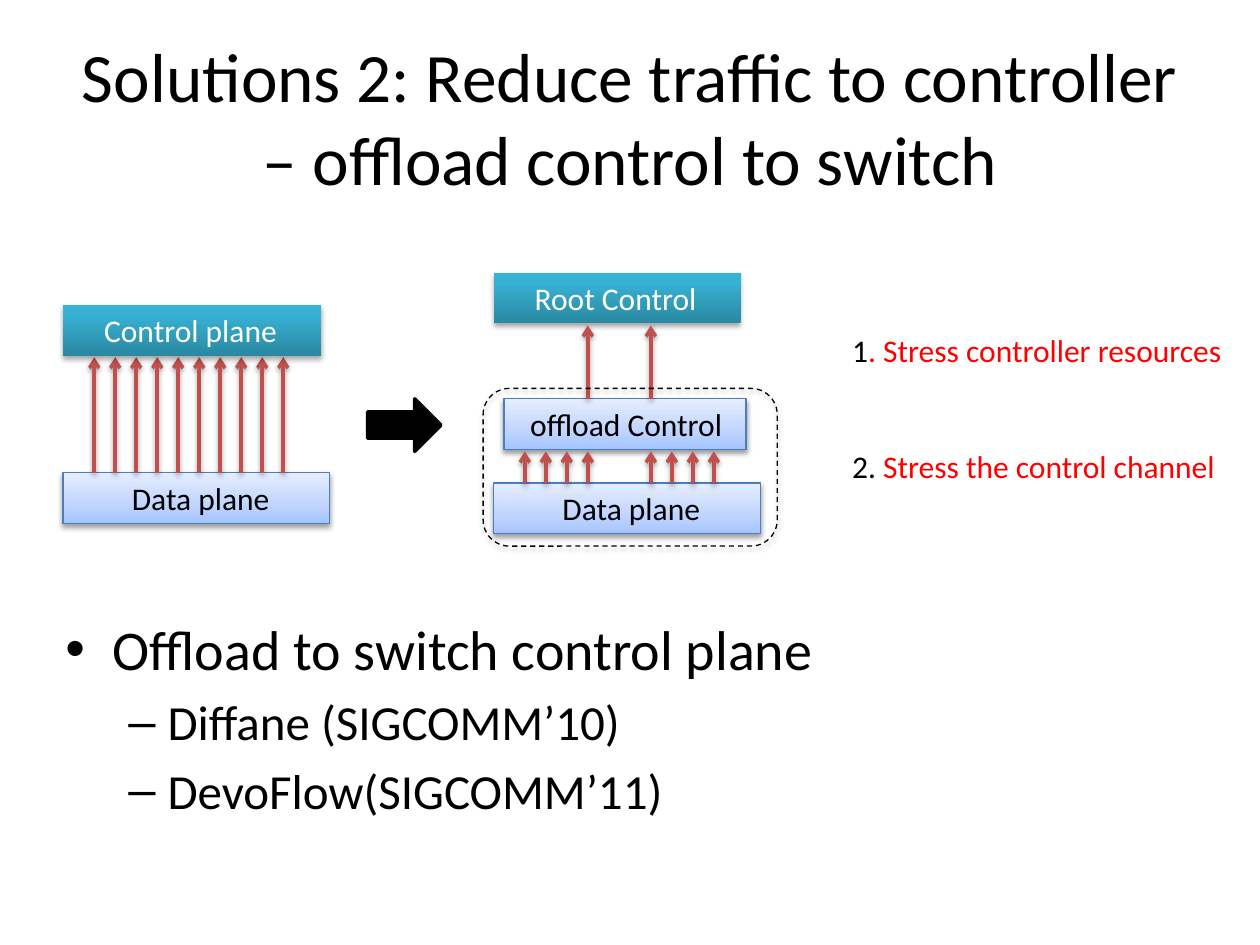
"""Build a slide on offloading control traffic to the switch."""
from copy import deepcopy

from lxml import etree
from pptx import Presentation, util as u
from pptx.dml.color import RGBColor
from pptx.enum import dml, shapes, text
from pptx.oxml.ns import qn

COLORS = {"black": "000000", "white": "FFFFFF", "red": "FF0000", "arrow": "C0504D", "edge": "4B7EBC"}
GRADIENTS = {
    "data": [(0, "A4C4FF"), (0.35, "BFD4FF"), (1, "E6EEFF")],
    "control": [(0, "2A88A2"), (0.8, "37B1D2"), (1, "34B4D6")],
}
FONT = "Calibri"
BOX_HEIGHT = 1.02
ARROW_STEP = 2.54 / 6


def color(name):
    return RGBColor.from_string(COLORS[name])


def place(left, top, width, height):
    return [u.Cm(value) for value in (left, top, width, height)]


def style_font(font, size, name="black"):
    font.name = FONT
    font.size = u.Pt(size)
    font.color.rgb = color(name)


def add_shadow(shape, distance=1.6, opacity=38):
    effects = etree.SubElement(shape._element.spPr, qn("a:effectLst"))
    shadow = etree.SubElement(
        effects, qn("a:outerShdw"), blurRad=str(u.Pt(3.1)), dist=str(u.Pt(distance)),
        dir="5400000", rotWithShape="0")
    shade = etree.SubElement(shadow, qn("a:srgbClr"), val=COLORS["black"])
    etree.SubElement(shade, qn("a:alpha"), val=str(opacity * 1000))


def fill_gradient(shape, stops):
    shape.fill.gradient()
    shape.fill.gradient_angle = 90
    stop_list = shape._element.spPr.find(qn("a:gradFill")).find(qn("a:gsLst"))
    stop_list.append(deepcopy(stop_list[0]))
    for stop, (position, value) in zip(shape.fill.gradient_stops, stops):
        stop.position = position
        stop.color.rgb = RGBColor.from_string(value)


def add_plane(slide, kind, label, left, top, width, indent):
    shape = slide.shapes.add_shape(
        shapes.MSO_SHAPE.RECTANGLE, *place(left, top, width, BOX_HEIGHT))
    fill_gradient(shape, GRADIENTS[kind])
    if kind == "data":
        shape.line.color.rgb = color("edge")
        shape.line.width = u.Pt(0.75)
        add_shadow(shape)
    else:
        shape.line.fill.background()
        add_shadow(shape, 1.8, 35)
    frame = shape.text_frame
    frame.word_wrap = True
    frame.margin_left = u.Cm(indent)
    frame.vertical_anchor = text.MSO_ANCHOR.TOP
    paragraph = frame.paragraphs[0]
    paragraph.text = label
    paragraph.alignment = text.PP_ALIGN.LEFT
    style_font(paragraph.font, 18, "black" if kind == "data" else "white")


def add_arrows(slide, first, count, bottom, top):
    for index in range(count):
        x = u.Cm(first + index * ARROW_STEP)
        arrow = slide.shapes.add_connector(
            shapes.MSO_CONNECTOR.STRAIGHT, x, u.Cm(bottom), x, u.Cm(top))
        arrow.line.color.rgb = color("arrow")
        arrow.line.width = u.Pt(2)
        etree.SubElement(arrow.line._get_or_add_ln(), qn("a:tailEnd"), type="arrow")
        add_shadow(arrow)


def add_title(slide, title):
    frame = slide.shapes.add_textbox(*place(1.27, 0.76, 22.86, 3.18)).text_frame
    frame.word_wrap = True
    frame.vertical_anchor = text.MSO_ANCHOR.MIDDLE
    paragraph = frame.paragraphs[0]
    paragraph.text = title
    paragraph.alignment = text.PP_ALIGN.CENTER
    style_font(paragraph.font, 39.6)


def add_bullets(slide, items):
    frame = slide.shapes.add_textbox(*place(1.07, 12.27, 22.86, 5.08)).text_frame
    frame.word_wrap = True
    styles = [("•", 32, 0.95, 0.95), ("–", 28, 2.06, 0.79)]
    for index, (level, label) in enumerate(items):
        mark, size, margin, hang = styles[level]
        paragraph = frame.add_paragraph() if index else frame.paragraphs[0]
        paragraph.text = label
        paragraph.level = level
        paragraph.space_before = u.Pt(size * 0.2)
        style_font(paragraph.font, size)
        properties = paragraph._p.get_or_add_pPr()
        properties.set("marL", str(u.Cm(margin)))
        properties.set("indent", str(-u.Cm(hang)))
        etree.SubElement(properties, qn("a:buFont"), typeface="Arial")
        etree.SubElement(properties, qn("a:buChar"), char=mark)
        properties.append(properties.find(qn("a:defRPr")))


def add_note(slide, number, label, top, width):
    frame = slide.shapes.add_textbox(*place(16.93, top, width, BOX_HEIGHT)).text_frame
    frame.word_wrap = False
    paragraph = frame.paragraphs[0]
    for words, name in ((number, "black"), (label, "red")):
        run = paragraph.add_run()
        run.text = words
        style_font(run.font, 18, name)


def add_block_arrow(slide):
    shape = slide.shapes.add_shape(
        shapes.MSO_SHAPE.RIGHT_ARROW, *place(7.41, 8.04, 1.48, 1.06))
    shape.shadow.inherit = False
    shape.fill.solid()
    shape.fill.fore_color.rgb = color("black")
    shape.line.color.rgb = color("black")
    shape.line.width = u.Pt(2)


def add_switch_outline(slide):
    shape = slide.shapes.add_shape(
        shapes.MSO_SHAPE.ROUNDED_RECTANGLE, *place(9.74, 7.83, 5.93, 3.18))
    shape.fill.background()
    shape.line.color.rgb = color("black")
    shape.line.width = u.Pt(0.75)
    shape.line.dash_style = dml.MSO_LINE.DASH
    add_shadow(shape)


def main():
    presentation = Presentation()
    presentation.slide_width, presentation.slide_height = u.Cm(25.4), u.Cm(19.05)
    slide = presentation.slides.add_slide(presentation.slide_layouts[6])

    add_title(slide, "Solutions 2: Reduce traffic to controller – offload control to switch")
    add_bullets(slide, [
        (0, "Offload to switch control plane"),
        (1, "Diffane (SIGCOMM’10)"),
        (1, "DevoFlow(SIGCOMM’11)"),
    ])
    add_note(slide, "1", ". Stress controller resources", 6.55, 8.03)
    add_note(slide, "2. ", "Stress the control channel", 8.89, 7.9)

    add_plane(slide, "data", "Data plane", 1.27, 9.53, 5.38, 1.39)
    add_arrows(slide, 1.9, 10, 9.53, 7.2)
    add_plane(slide, "control", "Control plane", 1.27, 6.15, 5.21, 0.83)
    add_block_arrow(slide)

    add_plane(slide, "data", "Data plane", 9.95, 9.74, 5.38, 1.39)
    add_plane(slide, "control", "Root Control", 9.95, 5.5, 4.98, 0.83)
    add_plane(slide, "data", "offload Control", 10.16, 8.04, 4.88, 0.53)
    for first in (10.58, 13.12):
        add_arrows(slide, first, 4, 9.74, 9.1)
    for x in (11.85, 13.12):
        add_arrows(slide, x, 1, 8.04, 6.56)
    add_switch_outline(slide)

    presentation.save("out.pptx")


if __name__ == "__main__":
    main()
